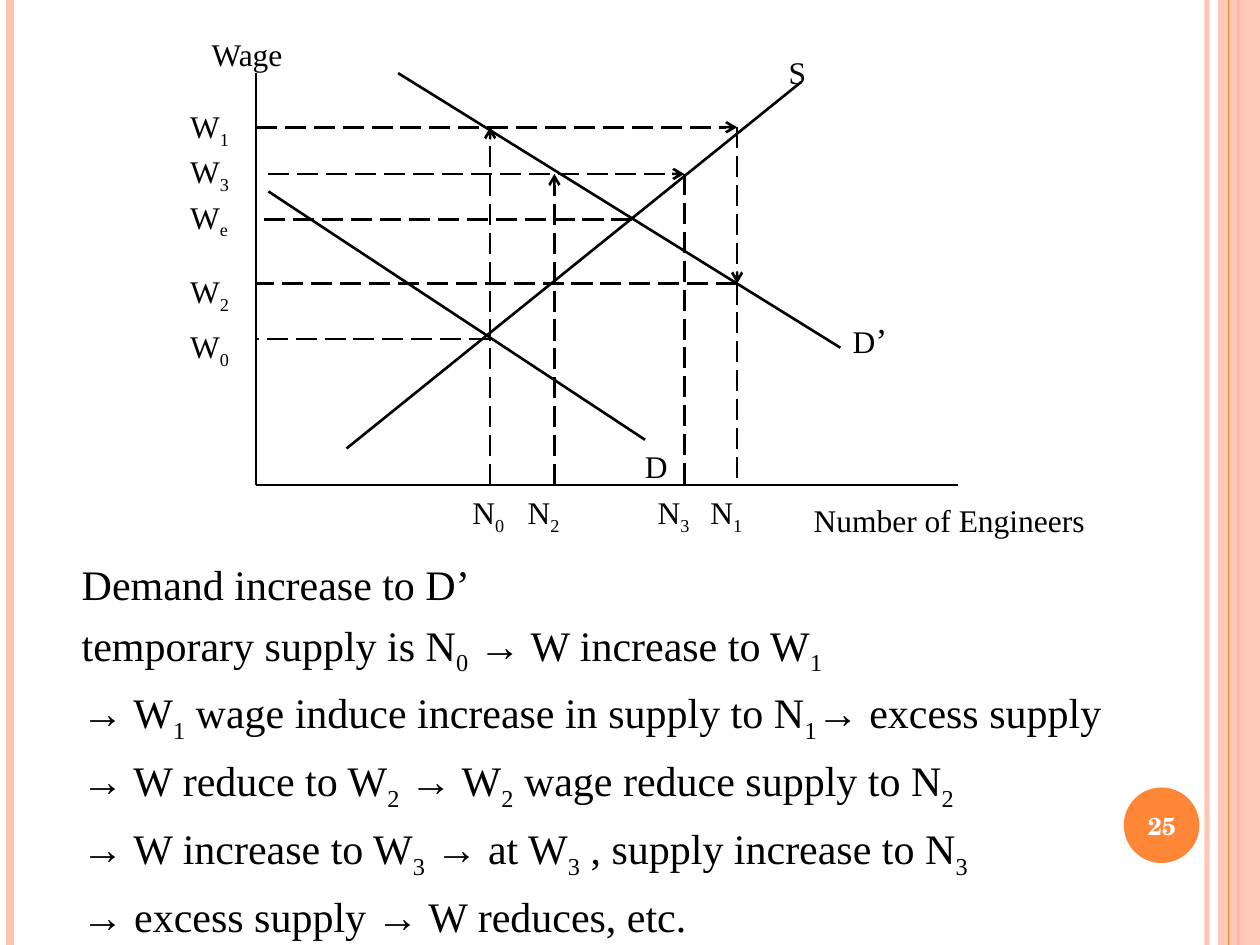
from lxml.etree import SubElement
from pptx import Presentation
from pptx.dml.color import RGBColor
from pptx.enum.dml import MSO_LINE
from pptx.enum.shapes import MSO_CONNECTOR, MSO_SHAPE
from pptx.enum.text import MSO_ANCHOR, MSO_AUTO_SIZE, PP_ALIGN
from pptx.oxml.ns import qn
from pptx.util import Pt

COLORS = {"ink": "000000", "peach": "FEC3AE", "orange": "FE8637", "white": "FFFFFF"}
SERIF = "Times New Roman"
PAGE_WIDTH, PAGE_HEIGHT = 720, 540
ORIGIN_X, ORIGIN_Y = 146.2, 277.2
BLANK_LAYOUT = 6

# Height of each wage level and distance from it up to its label
WAGES = {"1": (72.7, 15.1), "3": (99.4, 15.9), "e": (125.3, 15.9),
         "2": (162, 10.1), "0": (193.7, 10.1)}
# Position of each employment level and distance from it left to its label
ENGINEERS = {"0": (280.1, 17.3), "2": (316.8, 22.3),
             "3": (391, 22.3), "1": (421.2, 22.3)}

EXPLANATION = [
    "Demand increase to D’",
    "temporary supply is N_0 → W increase to W_1",
    "→ W_1 wage induce increase in supply to N_1→ excess supply",
    "→ W reduce to W_2 → W_2 wage reduce supply to N_2",
    "→ W increase to W_3 → at W_3 , supply increase to N_3",
    "→ excess supply → W reduces, etc.",
]


def rgb(name):
    return RGBColor.from_string(COLORS[name])


def set_alpha(fill_parent, percent):
    color = next(fill_parent.iter(qn("a:srgbClr")))
    SubElement(color, qn("a:alpha")).set("val", str(percent * 1000))


def add_line(slide, start, end, color="ink", width=1.5, dashed=False, arrow=False):
    line = slide.shapes.add_connector(
        MSO_CONNECTOR.STRAIGHT, *(Pt(value) for value in (*start, *end)))
    line.line.color.rgb = rgb(color)
    line.line.width = Pt(width)
    if dashed:
        line.line.dash_style = MSO_LINE.LONG_DASH
    if arrow:
        SubElement(line.line._get_or_add_ln(), qn("a:tailEnd")).set("type", "arrow")
    SubElement(line._element.spPr, qn("a:effectLst"))
    return line


def add_shape(slide, kind, left, top, width, height, color):
    shape = slide.shapes.add_shape(kind, Pt(left), Pt(top), Pt(width), Pt(height))
    shape.shadow.inherit = False
    shape.fill.solid()
    shape.fill.fore_color.rgb = rgb(color)
    shape.line.fill.background()
    return shape


def add_run(paragraph, text, size, color="ink", font=SERIF, bold=False):
    run = paragraph.add_run()
    run.text = text
    run.font.size = Pt(size)
    run.font.name = font
    run.font.bold = bold
    run.font.color.rgb = rgb(color)
    return run


def add_subscripted(paragraph, text, size):
    """Write text in which the character after each underscore is a subscript."""
    first, *rest = text.split("_")
    add_run(paragraph, first, size)
    for piece in rest:
        subscript = add_run(paragraph, piece[0], size)
        subscript.font._element.set("baseline", "-25000")
        if piece[1:]:
            add_run(paragraph, piece[1:], size)


def add_text_frame(slide, left, top, width, height, wrap=True):
    frame = slide.shapes.add_textbox(Pt(left), Pt(top), Pt(width), Pt(height)).text_frame
    frame.word_wrap = wrap
    return frame


def add_label(slide, text, left, top, width):
    frame = add_text_frame(slide, left, top, width, 26.6, wrap=False)
    frame.auto_size = MSO_AUTO_SIZE.SHAPE_TO_FIT_TEXT
    add_subscripted(frame.paragraphs[0], text, 18)
    return frame.paragraphs[0]


def add_page_border(slide):
    def stripe(x, color, width):
        return add_line(slide, (x, 0), (x, PAGE_HEIGHT), color, width)

    set_alpha(stripe(689.8, "peach", 3)._element, 93)
    stripe(5.8, "peach", 4.5)
    stripe(707.8, "orange", 1.5)
    band = add_shape(slide, MSO_SHAPE.RECTANGLE, 696, 0, 24, PAGE_HEIGHT, "peach")
    set_alpha(band._element.spPr, 87)
    stripe(702, "orange", 0.75)


def add_page_number(slide, number):
    add_shape(slide, MSO_SHAPE.OVAL, 642.2, 450, 43.2, 43.2, "orange")
    frame = add_text_frame(slide, 640, 451.4, 48, 41)
    frame.vertical_anchor = MSO_ANCHOR.MIDDLE
    frame.paragraphs[0].alignment = PP_ALIGN.CENTER
    add_run(frame.paragraphs[0], number, 14, "white", "TeX Gyre Schola", True)


def add_axes_and_curves(slide):
    origin = (ORIGIN_X, ORIGIN_Y)
    add_line(slide, origin, (ORIGIN_X, 41.8))
    add_line(slide, origin, (547.2, ORIGIN_Y))
    add_label(slide, "Wage", 113.8, 16.6, 74)
    add_label(slide, "Number of Engineers", 457.9, 283, 228)

    add_line(slide, (198, 256.3), (457.9, 46.8))
    add_label(slide, "S", 457.9 - 14.4, 26.6, 32)
    add_line(slide, (153.4, 109.4), (368.6, 251.3))
    add_label(slide, "D", 361.4, 252, 36)
    add_line(slide, (227.5, 41.8), (480.2, 198.7))
    add_run(add_label(slide, "D", 480.2, 178.6, 35), "’", 20)


def add_adjustment_path(slide):
    """Draw the dashed steps by which wage and employment move to equilibrium."""
    wage = {key: y for key, (y, _) in WAGES.items()}
    count = {key: x for key, (x, _) in ENGINEERS.items()}
    steps = [
        ((count["0"], ORIGIN_Y), (count["0"], wage["1"]), True),
        ((ORIGIN_X, wage["1"]), (count["1"], wage["1"]), True),
        ((count["1"], wage["1"]), (count["1"], wage["2"]), True),
        ((count["1"], wage["2"]), (count["1"], ORIGIN_Y), False),
        ((count["1"], wage["2"]), (ORIGIN_X, wage["2"]), False),
        ((count["2"], ORIGIN_Y), (count["2"], wage["3"]), True),
        ((153.4, wage["3"]), (count["3"], wage["3"]), True),
        ((count["3"], wage["3"]), (count["3"], ORIGIN_Y), False),
        ((361.4, wage["e"]), (ORIGIN_X, wage["e"]), False),
        ((count["0"], wage["0"]), (ORIGIN_X, wage["0"]), False),
    ]
    for start, end, arrow in steps:
        add_line(slide, start, end, dashed=True, arrow=arrow)


def add_level_labels(slide):
    for key, (x, offset) in ENGINEERS.items():
        add_label(slide, f"N_{key}", x - offset, 278.2, 44)
    for key, (y, offset) in WAGES.items():
        add_label(slide, f"W_{key}", 101.5, y - offset, 49)


def add_explanation(slide):
    frame = add_text_frame(slide, 39.6, 315.4, 627, 211.7)
    frame.auto_size = MSO_AUTO_SIZE.SHAPE_TO_FIT_TEXT
    for index, sentence in enumerate(EXPLANATION):
        paragraph = frame.add_paragraph() if index else frame.paragraphs[0]
        paragraph.space_after = Pt(6)
        add_subscripted(paragraph, sentence, 24)


def main():
    deck = Presentation()
    deck.slide_width, deck.slide_height = Pt(PAGE_WIDTH), Pt(PAGE_HEIGHT)
    slide = deck.slides.add_slide(deck.slide_layouts[BLANK_LAYOUT])
    add_page_border(slide)
    add_axes_and_curves(slide)
    add_adjustment_path(slide)
    add_level_labels(slide)
    add_explanation(slide)
    add_page_number(slide, "25")
    deck.save("out.pptx")


if __name__ == "__main__":
    main()
